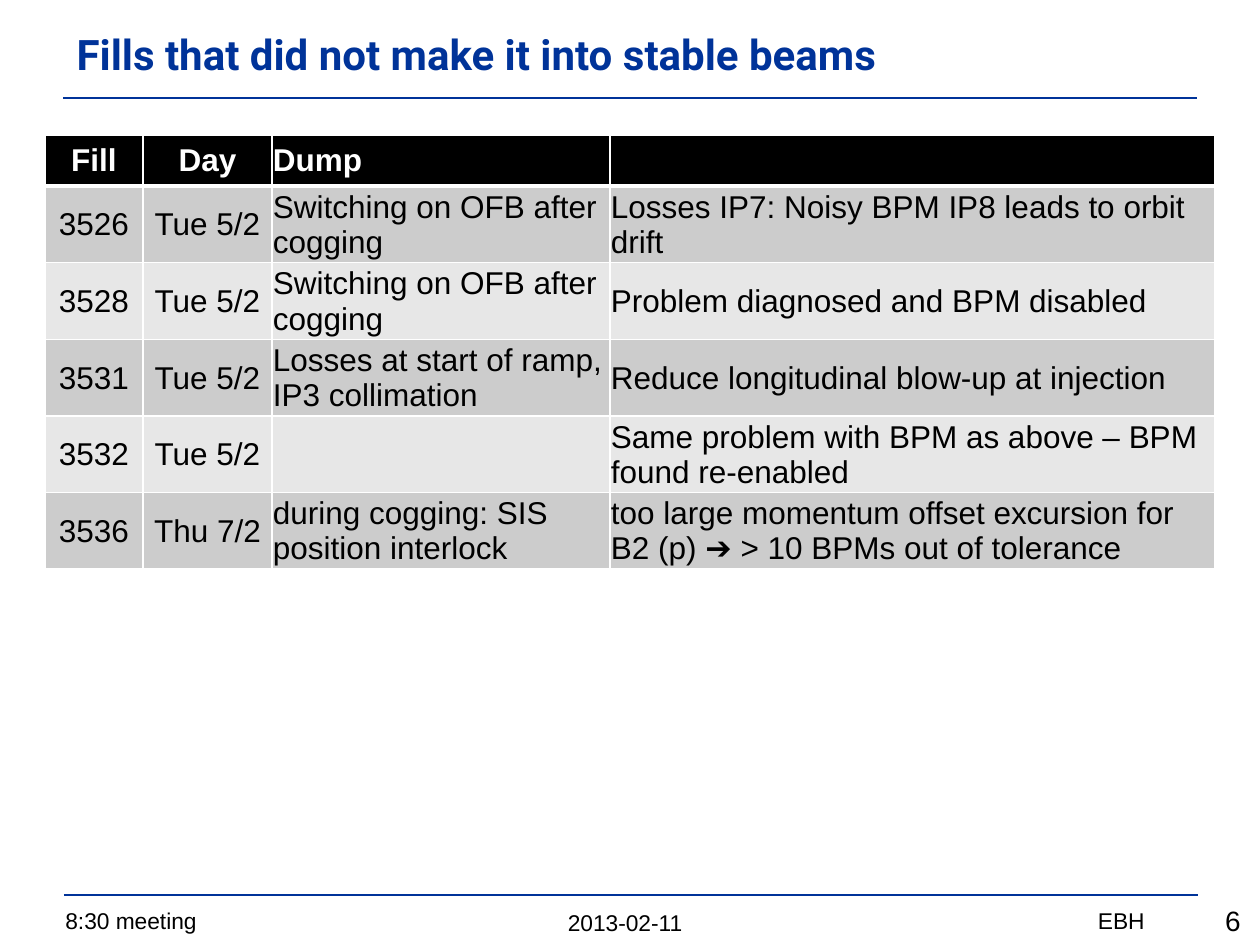
"""Build the slide listing fills that did not make it into stable beams."""
from dataclasses import dataclass

from lxml import etree
from pptx import Presentation
from pptx import util as u
from pptx.dml.color import RGBColor
from pptx.enum import shapes, text
from pptx.oxml.ns import qn

SCALE = 914400 / 126
HUES = {"blue": "003399", "black": "000000", "white": "FFFFFF",
        "dark": "CCCCCC", "light": "E7E7E7"}
LEFT, MID, RIGHT = text.PP_ALIGN.LEFT, text.PP_ALIGN.CENTER, text.PP_ALIGN.RIGHT
COLS = (98, 129, 338, 605)
HEAD, ROW = 51, 72
FILLS = (
    ("Fill", "Day", "Dump", ""),
    ("3526", "Tue 5/2", "Switching on OFB after cogging",
     "Losses IP7: Noisy BPM IP8 leads to orbit drift"),
    ("3528", "Tue 5/2", "Switching on OFB after cogging",
     "Problem diagnosed and BPM disabled"),
    ("3531", "Tue 5/2", "Losses at start of ramp, IP3 collimation",
     "Reduce longitudinal blow-up at injection"),
    ("3532", "Tue 5/2", "",
     "Same problem with BPM as above – BPM found re-enabled"),
    ("3536", "Thu 7/2", "during cogging: SIS position interlock",
     "too large momentum offset excursion for B2 (p) ➔ > 10 BPMs out of tolerance"),
)


@dataclass
class Note:
    words: str
    x: int
    y: int
    w: int
    h: int
    align: text.PP_ALIGN
    size: int = 13


@dataclass
class Rule:
    x: int
    y: int
    w: int = 1134


NOTES = (
    Note("2013-02-11", 305, 903, 640, 40, MID),
    Note("8:30 meeting", 53, 901, 466, 40, LEFT),
    Note("EBH", 789, 901, 368, 40, RIGHT),
    Note("6", 1108, 897, 145, 47, RIGHT, 16),
)
RULES = (Rule(64, 895), Rule(63, 98))


def px(n: int) -> int:
    return round(n * SCALE)


def hue(name: str) -> RGBColor:
    return RGBColor.from_string(HUES[name])


def style(frame, align, size: int, color: str, face="Arial", bold=False) -> None:
    for para in frame.paragraphs:
        para.alignment = align
        for font in [para.font] + [run.font for run in para.runs]:
            font.name, font.size, font.bold = face, u.Pt(size), bold
            font.color.rgb = hue(color)


def add_note(slide, note: Note) -> None:
    box = slide.shapes.add_textbox(px(note.x), px(note.y), px(note.w), px(note.h))
    box.text_frame.word_wrap = True
    box.text_frame.text = note.words
    style(box.text_frame, note.align, note.size, "black")


def add_rule(slide, rule: Rule) -> None:
    line = slide.shapes.add_connector(
        shapes.MSO_CONNECTOR.STRAIGHT,
        px(rule.x), px(rule.y), px(rule.x + rule.w), px(rule.y))
    line.line.color.rgb = hue("blue")
    line.line.width = u.Pt(1.5)
    etree.SubElement(line._element.spPr, qn("a:effectLst"))


def add_edges(cell, top: int, base: int) -> None:
    props = cell._tc.get_or_add_tcPr()
    edges = (("lnL", 1), ("lnR", 1), ("lnT", top), ("lnB", base))
    for i, (tag, width) in enumerate(edges):
        edge = etree.Element(qn(f"a:{tag}"), w=str(u.Pt(width)))
        fill = etree.SubElement(edge, qn("a:solidFill"))
        etree.SubElement(fill, qn("a:srgbClr"), val=HUES["white"])
        props.insert(i, edge)


def add_cell(cell, words: str, row: int, col: int) -> None:
    head = row == 0
    cell.text_frame.text = words
    cell.vertical_anchor = text.MSO_ANCHOR.MIDDLE
    cell.margin_left = cell.margin_right = cell.margin_top = px(1)
    cell.margin_bottom = 0
    style(cell.text_frame, MID if col < 2 else LEFT, 18,
          "white" if head else "black", bold=head)
    cell.fill.solid()
    cell.fill.fore_color.rgb = hue(
        "black" if head else "dark" if row % 2 else "light")
    add_edges(cell, 3 if row == 1 else 1, 3 if head else 1)


def add_grid(slide) -> None:
    high = HEAD + ROW * (len(FILLS) - 1)
    grid = slide.shapes.add_table(
        len(FILLS), len(COLS), px(45), px(135), px(sum(COLS)), px(high)).table
    for col, wide in zip(grid.columns, COLS):
        col.width = px(wide)
    for r, words in enumerate(FILLS):
        grid.rows[r].height = px(ROW if r else HEAD)
        for c, word in enumerate(words):
            add_cell(grid.cell(r, c), word, r, c)


def set_title(slide) -> None:
    title = slide.shapes.title
    title.left, title.top, title.width, title.height = map(px, (64, 11, 1133, 86))
    title.text_frame.text = "Fills that did not make it into stable beams"
    title.text_frame.vertical_anchor = text.MSO_ANCHOR.MIDDLE
    style(title.text_frame, LEFT, 24, "blue", "Roboto", True)


def main() -> None:
    deck = Presentation()
    deck.slide_width, deck.slide_height = px(1260), px(945)
    slide = deck.slides.add_slide(deck.slide_layouts[5])
    for note in NOTES:
        add_note(slide, note)
    for rule in RULES:
        add_rule(slide, rule)
    set_title(slide)
    add_grid(slide)
    deck.save("out.pptx")


if __name__ == "__main__":
    main()
